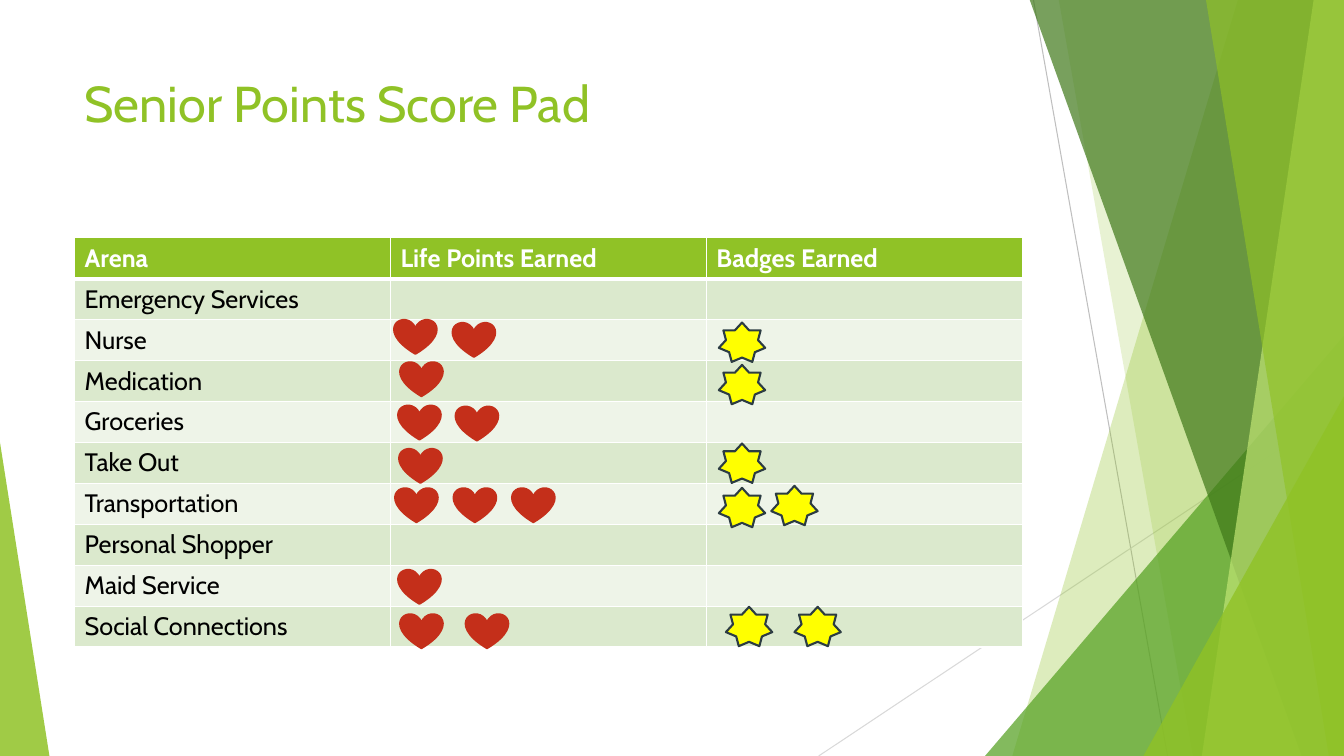
from lxml import etree
from pptx import Presentation
from pptx import util as u
from pptx.dml.color import RGBColor
from pptx.enum import shapes, text
from pptx.oxml import ns

PX = 9144  # EMU per px, 100 px to the inch

WHITE = RGBColor(0xFF, 0xFF, 0xFF)
BLACK = RGBColor(0x00, 0x00, 0x00)
LIME = RGBColor(0x90, 0xC2, 0x26)
PALE_LIME = RGBColor(0xC0, 0xE4, 0x74)
GREEN = RGBColor(0x54, 0xA0, 0x21)
DARK_GREEN = RGBColor(0x3F, 0x78, 0x19)
BAND_DARK = RGBColor(0xDB, 0xE9, 0xCD)
BAND_LIGHT = RGBColor(0xEE, 0xF4, 0xE8)
GREY = RGBColor(0xBF, 0xBF, 0xBF)
LIGHT_GREY = RGBColor(0xD9, 0xD9, 0xD9)
RED = RGBColor(0xC4, 0x2F, 0x1A)
YELLOW = RGBColor(0xFF, 0xFF, 0x00)
SLATE = RGBColor(0x2C, 0x3C, 0x43)


def write(frame, words, color, formats):
    run = frame.paragraphs[0].add_run()
    run.text = words
    run.font.color.rgb = color
    for name, value in formats.items():
        setattr(run.font, name, value)


def paint(shape, color):
    shape.shadow.inherit = False
    shape.fill.solid()
    shape.fill.fore_color.rgb = color


deck = Presentation()
deck.slide_width, deck.slide_height = 1333 * PX, 750 * PX
slide = deck.slides.add_slide(deck.slide_layouts[6])
canvas = slide.shapes

# Thin background lines
for ends, color in [((1025, 0, 1158, 750), GREY), ((1333, 403, 812, 750), LIGHT_GREY)]:
    ray = canvas.add_connector(shapes.MSO_CONNECTOR.STRAIGHT, *(v * PX for v in ends))
    ray.line.color.rgb = color
    ray.line.width = u.Pt(0.75)
    etree.SubElement(ray.line._get_or_add_ln().getparent(), ns.qn("a:effectLst"))

# Translucent facets: corner points, or a box with the place of the triangle's tip
facets = [
    (LIME, 30, [(1228, -1), (1333, -1), (1333, 750), (1004, 750)], None),
    (LIME, 20, [(1050, -1), (1333, -1), (1333, 750), (1183, 750)], None),
    (GREEN, 72, (977, 333, 356, 417), 1),
    (DARK_GREEN, 70, [(1021, -1), (1333, -1), (1333, 750), (1291, 750)], None),
    (PALE_LIME, 70, [(1303, -1), (1333, -1), (1333, 750), (1192, 750)], None),
    (LIME, 65, [(1196, -1), (1333, -1), (1333, 750), (1318, 750)], None),
    (LIME, 80, (1134, 393, 199, 357), 1),
    (LIME, 85, (0, 439, 49, 311), 0),
]
for color, opacity, outline, tip in facets:
    if tip is None:
        builder = canvas.build_freeform(*outline[0], scale=PX)
        builder.add_line_segments(outline[1:], close=True)
        facet = builder.convert_to_shape()
    else:
        facet = canvas.add_shape(shapes.MSO_SHAPE.ISOSCELES_TRIANGLE, *(v * PX for v in outline))
        facet.adjustments[0] = tip
    paint(facet, color)
    facet.line.fill.background()
    tint = facet.fill._xPr.find(".//" + ns.qn("a:srgbClr"))
    etree.SubElement(tint, ns.qn("a:alpha"), val=str(opacity * 1000))

# Title
title = canvas.add_textbox(74 * PX, 67 * PX, 940 * PX, 144 * PX).text_frame
title.word_wrap = True
title.vertical_anchor = text.MSO_ANCHOR.TOP
write(title, "Senior Points Score Pad", LIME, {"name": "Cabin", "size": u.Pt(36)})

# Score table: arena, hearts and stars by top left corner
headings = ["Arena", "Life Points Earned", "Badges Earned"]
arenas = [
    ("Emergency Services", [], []),
    ("Nurse", [(449, 320), (391, 317)], [(713, 320)]),
    ("Medication", [(397, 359)], [(713, 362)]),
    ("Groceries", [(452, 403), (395, 402)], []),
    ("Take Out", [(396, 445)], [(713, 440)]),
    ("Transportation", [(508, 484), (450, 484), (392, 484)], [(765, 482), (713, 484)]),
    ("Personal Shopper", [], []),
    ("Maid Service", [(395, 565)], []),
    ("Social Connections", [(462, 609), (397, 609)], [(788, 602), (720, 602)]),
]
rows = [headings] + [[arena, "", ""] for arena, _, _ in arenas]
scores = canvas.add_table(len(rows), 3, 74 * PX, 236 * PX, 940 * PX, 406 * PX).table
for r, row in enumerate(rows):
    is_header = r == 0
    band = LIME if is_header else BAND_DARK if r % 2 else BAND_LIGHT
    for c, words in enumerate(row):
        cell = scores.cell(r, c)
        cell.fill.solid()
        cell.fill.fore_color.rgb = band
        cell.vertical_anchor = text.MSO_ANCHOR.TOP
        if words:
            write(cell.text_frame, words, WHITE if is_header else BLACK,
                  {"name": "Cabin", "size": u.Pt(18), "bold": is_header})
        # White rules, thicker under the header
        properties = cell._tc.get_or_add_tcPr()
        for place, side in enumerate("LRTB"):
            thick = (r, side) in [(0, "B"), (1, "T")]
            rule = etree.Element(ns.qn("a:ln" + side), w=str(u.Pt(3 if thick else 1)))
            fill = etree.SubElement(rule, ns.qn("a:solidFill"))
            etree.SubElement(fill, ns.qn("a:srgbClr"), val=str(WHITE))
            properties.insert(place, rule)

# Life points and badges
heart = (shapes.MSO_SHAPE.HEART, 42, 34, RED, RED)
star = (shapes.MSO_SHAPE.STAR_7_POINT, 46, 39, YELLOW, SLATE)
for column, (preset, width, height, color, edge) in enumerate([heart, star], start=1):
    for arena in arenas:
        for x, y in arena[column]:
            mark = canvas.add_shape(preset, x * PX, y * PX, width * PX, height * PX)
            paint(mark, color)
            mark.line.color.rgb = edge
            mark.line.width = u.Pt(1.5)

deck.save("out.pptx")
